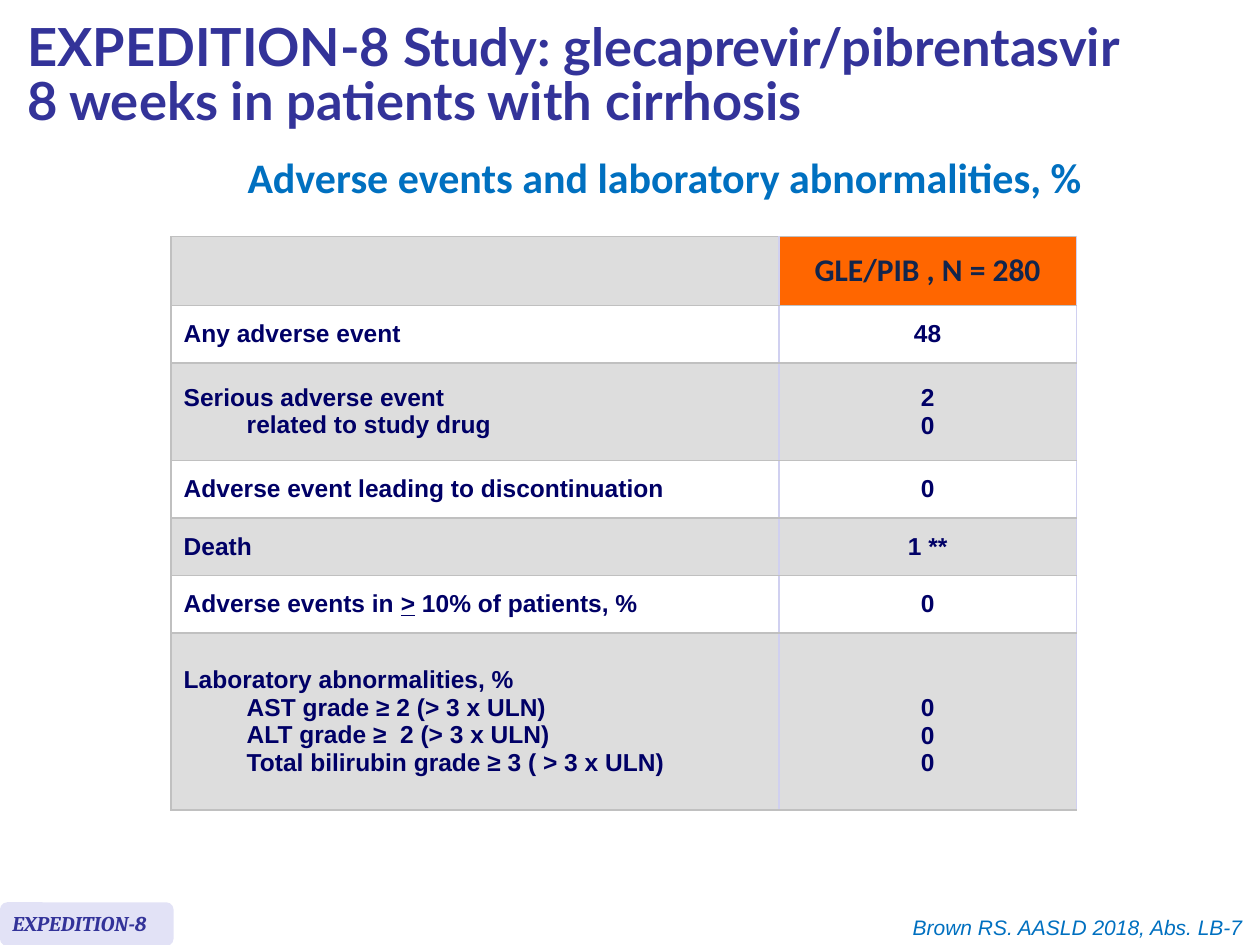
from lxml import etree
from pptx import Presentation
from pptx.dml.color import RGBColor
from pptx.enum.shapes import MSO_SHAPE
from pptx.enum.text import MSO_ANCHOR, PP_ALIGN
from pptx.oxml.ns import qn
from pptx.util import Cm, Pt

LEFT, CENTER, RIGHT = PP_ALIGN.LEFT, PP_ALIGN.CENTER, PP_ALIGN.RIGHT
TOP, MIDDLE = MSO_ANCHOR.TOP, MSO_ANCHOR.MIDDLE
ROUNDED = MSO_SHAPE.ROUNDED_RECTANGLE

INDIGO, BLUE, NAVY, HEADER_TEXT = "333399", "0070C0", "000066", "12254C"
WHITE, GREY, ORANGE, LAVENDER = "FFFFFF", "DDDDDD", "FF6600", "E2E2F6"
RULE, DIVIDER = "C0C0C0", "D0D0F0"
LINE_HEIGHT = 0.57  # one line of table text, in cm

# Row height, labels (">" before a label indents it, "_" encloses underlining), values
ROWS = [
    (1.16, ["Any adverse event"], ["48"]),
    (1.96, ["Serious adverse event", ">related to study drug"], ["2", "0"]),
    (1.16, ["Adverse event leading to discontinuation"], ["0"]),
    (1.16, ["Death"], ["1 **"]),
    (1.16, ["Adverse events in _>_ 10% of patients, %"], ["0"]),
    (3.57, ["Laboratory abnormalities, %", ">AST grade ≥ 2 (> 3 x ULN)",
            ">ALT grade ≥  2 (> 3 x ULN)",
            ">Total bilirubin grade ≥ 3 ( > 3 x ULN)"], ["0", "0", "0"]),
]


def color(code):
    return RGBColor.from_string(code)


class SlideBuilder:
    def __init__(self, deck):
        self.page = deck.slides.add_slide(deck.slide_layouts[6])

    def style(self, span, font, size, ink, bold=False, italic=False):
        span.font.name, span.font.size = font, Pt(size)
        span.font.bold, span.font.italic = bold, italic
        span.font.color.rgb = color(ink)

    def text(self, place, words, font, size, ink, align=LEFT, anchor=TOP,
             spacing=None, bold=False, italic=False):
        box = self.page.shapes.add_textbox(*map(Cm, place))
        frame = box.text_frame
        frame.word_wrap, frame.vertical_anchor = True, anchor
        frame.text = words
        for para in frame.paragraphs:
            para.alignment, para.line_spacing = align, spacing
            for span in para.runs:
                self.style(span, font, size, ink, bold, italic)

    def panel(self, place, fill):
        shape = self.page.shapes.add_shape(ROUNDED, *map(Cm, place))
        shape.shadow.inherit = False
        shape.fill.solid()
        shape.fill.fore_color.rgb = color(fill)
        shape.line.fill.background()

    def borders(self, cell, left):
        properties = cell._tc.get_or_add_tcPr()
        edges = [("a:lnL", left), ("a:lnR", DIVIDER), ("a:lnT", RULE), ("a:lnB", RULE)]
        for position, (tag, ink) in enumerate(edges):
            line = etree.Element(qn(tag), w=str(Pt(1)))
            fill = etree.SubElement(line, qn("a:solidFill"))
            etree.SubElement(fill, qn("a:srgbClr"), val=ink)
            properties.insert(position, line)

    def cell(self, cell, lines, fill, left, align=LEFT, font="Arial", size=14, ink=NAVY):
        cell.fill.solid()
        cell.fill.fore_color.rgb = color(fill)
        cell.vertical_anchor = MIDDLE
        self.borders(cell, left)
        frame = cell.text_frame
        for index, line in enumerate(lines):
            para = frame.add_paragraph() if index else frame.paragraphs[0]
            para.alignment = align
            if line.startswith(">"):
                para.level = 1
                para._p.get_or_add_pPr().set("marL", str(Cm(1.27)))
                line = line[1:]
            for order, piece in enumerate(line.split("_")):
                span = para.add_run()
                span.text = piece
                self.style(span, font, size, ink, bold=True)
                span.font.underline = order % 2 == 1

    def table(self, left, top, widths, header_height, header, rows):
        heights = [header_height] + [row[0] for row in rows]
        frame = self.page.shapes.add_table(
            len(heights), len(widths), Cm(left), Cm(top), Cm(sum(widths)), Cm(sum(heights)))
        table = frame.table
        for column, width in zip(table.columns, widths):
            column.width = Cm(width)
        for row, height in zip(table.rows, heights):
            row.height = Cm(height)
        self.cell(table.cell(0, 0), [], GREY, RULE)
        self.cell(table.cell(0, 1), [header], ORANGE, DIVIDER, CENTER,
                  "Calibri", 18, HEADER_TEXT)
        for index, (_, labels, values) in enumerate(rows, 1):
            fill = WHITE if index % 2 else GREY
            self.cell(table.cell(index, 0), labels, fill, RULE)
            result = table.cell(index, 1)
            self.cell(result, values, fill, DIVIDER, CENTER)
            # Values line up with the last labels of their row
            result.margin_top = Cm(0.13 + LINE_HEIGHT * (len(labels) - len(values)))


def main():
    deck = Presentation()
    deck.slide_width, deck.slide_height = Cm(25.4), Cm(19.05)
    slide = SlideBuilder(deck)

    # Title and subtitle
    slide.text((0.3, 0.2, 23.4, 2.72),
               "EXPEDITION-8 Study: glecaprevir/pibrentasvir\v8 weeks in patients with cirrhosis",
               "Lato", 30, INDIGO, anchor=MIDDLE, spacing=0.85, bold=True)
    slide.text((1.4, 3.4, 24, 0.9), "Adverse events and laboratory abnormalities, %",
               "Calibri", 24, BLUE, CENTER, spacing=Pt(15.2), bold=True)

    # Results table
    slide.table(3.45, 4.77, [12.25, 6], 1.39, "GLE/PIB , N = 280", ROWS)

    # Study tag and citation
    slide.panel((0, 18.19, 3.5, 0.88), LAVENDER)
    slide.text((0, 18.24, 3.5, 0.76), "EXPEDITION-8", "Cambria", 12, INDIGO,
               bold=True, italic=True)
    slide.text((6.7, 18.31, 18.6, 0.76), "Brown RS. AASLD 2018, Abs. LB-7",
               "Arial", 12, BLUE, RIGHT, italic=True)

    deck.save("out.pptx")


if __name__ == "__main__":
    main()
